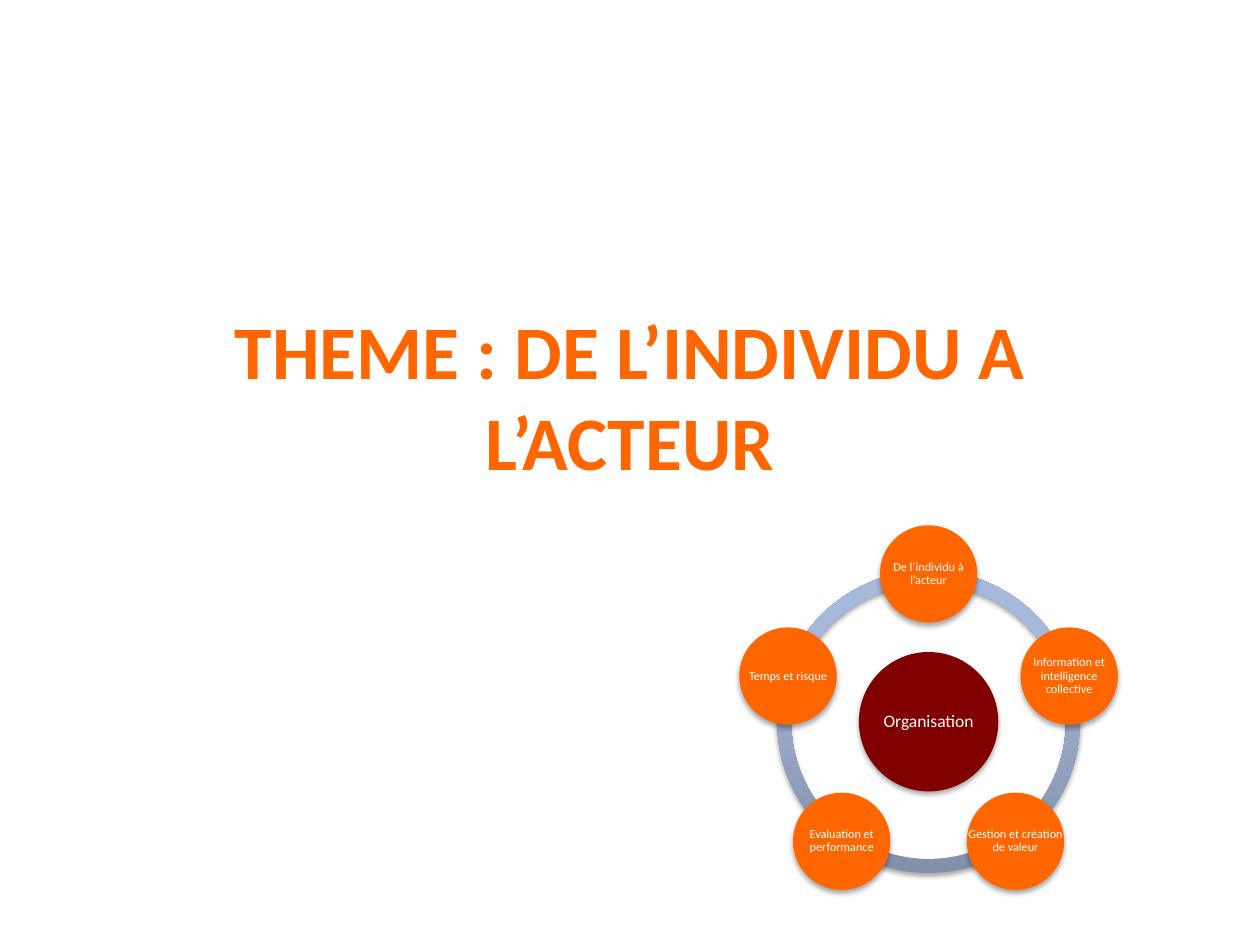
import math

from lxml import etree
from pptx import Presentation
from pptx.dml.color import RGBColor
from pptx.enum import shapes, text
from pptx.oxml import ns
from pptx.util import Cm, Pt

# Content
TITLE = "THEME : DE L’INDIVIDU A L’ACTEUR"
HUB = "Organisation"
THEMES = [  # clockwise from the top
    "De l’individu à l’acteur",
    "Information et intelligence collective",
    "Gestion et création de valeur",
    "Evaluation et performance",
    "Temps et risque",
]

# Style and geometry, in centimetres
COLORS = {
    "orange": "FF6600",
    "hub": "800000",
    "text": "FFFFFF",
    "ring_dark": "818FA8",
    "ring_light": "A7B9DA",
    "shadow": "000000",
}
FONT = "Calibri"
CENTER_X, CENTER_Y = 18.72, 14.55
RING_SIZE, HUB_SIZE, NODE_SIZE = 6.1, 2.81, 1.96
ORBIT = 2.98
RING_THICKNESS = 0.046
INSET = 0.02


def rgb(name):
    return RGBColor.from_string(COLORS[name])


def square(x, y, size):
    return Cm(x - size / 2), Cm(y - size / 2), Cm(size), Cm(size)


def add_text(frame, words, size, color, bold=False):
    frame.word_wrap = True
    frame.vertical_anchor = text.MSO_ANCHOR.MIDDLE
    paragraph = frame.paragraphs[0]
    paragraph.alignment = text.PP_ALIGN.CENTER
    run = paragraph.add_run()
    run.text = words
    run.font.name = FONT
    run.font.size = Pt(size)
    run.font.bold = bold
    run.font.color.rgb = rgb(color)
    return paragraph


def finish_shape(shape):
    """Remove the outline and set a soft shadow below the shape."""
    shape.line.fill.background()
    shape.shadow.inherit = False
    effects = shape._element.spPr.find(ns.qn("a:effectLst"))
    shadow = etree.SubElement(effects, ns.qn("a:outerShdw"), blurRad=str(Pt(3.1)),
                              dist=str(Pt(1.8)), dir="5400000", rotWithShape="0")
    color = etree.SubElement(shadow, ns.qn("a:srgbClr"), val=COLORS["shadow"])
    etree.SubElement(color, ns.qn("a:alpha"), val="35000")


def add_arc(group, start, end):
    arc = group.shapes.add_shape(shapes.MSO_SHAPE.BLOCK_ARC,
                                 *square(CENTER_X, CENTER_Y, RING_SIZE))
    # Angles are stored in 1/60000 degree, adjustments in 1/100000
    arc.adjustments[0] = start * 0.6
    arc.adjustments[1] = end * 0.6
    arc.adjustments[2] = RING_THICKNESS
    arc.fill.gradient()
    arc.fill.gradient_angle = 90
    dark, light = arc.fill.gradient_stops
    dark.color.rgb, dark.position = rgb("ring_dark"), 0
    light.color.rgb, light.position = rgb("ring_light"), 0.8
    finish_shape(arc)


def add_disc(group, words, x, y, size, color, font_size):
    box = square(x, y, size)
    disc = group.shapes.add_shape(shapes.MSO_SHAPE.OVAL, *box)
    disc.fill.solid()
    disc.fill.fore_color.rgb = rgb(color)
    finish_shape(disc)
    # The label uses the full width of the disc
    frame = group.shapes.add_textbox(*box).text_frame
    frame.margin_left = frame.margin_right = Cm(INSET)
    frame.margin_top = frame.margin_bottom = Cm(INSET)
    add_text(frame, words, font_size, "text").line_spacing = 0.9


def main():
    presentation = Presentation()
    presentation.slide_width, presentation.slide_height = Cm(25.4), Cm(19.05)
    slide = presentation.slides.add_slide(presentation.slide_layouts[6])

    # Title
    title = slide.shapes.add_textbox(Cm(1.9), Cm(5.92), Cm(21.6), Cm(4.08))
    add_text(title.text_frame, TITLE, 43.2, "orange", bold=True)

    # Ring, hub and themes
    group = slide.shapes.add_group_shape()
    step = 360 / len(THEMES)
    angles = [(270 + step * index) % 360 for index in range(len(THEMES))]
    for angle in angles:
        add_arc(group, angle, (angle + step) % 360)
    add_disc(group, HUB, CENTER_X, CENTER_Y, HUB_SIZE, "hub", 10)
    for theme, angle in zip(THEMES, angles):
        x = CENTER_X + ORBIT * math.cos(math.radians(angle))
        y = CENTER_Y + ORBIT * math.sin(math.radians(angle))
        add_disc(group, theme, x, y, NODE_SIZE, "orange", 7)

    presentation.save("out.pptx")


if __name__ == "__main__":
    main()
